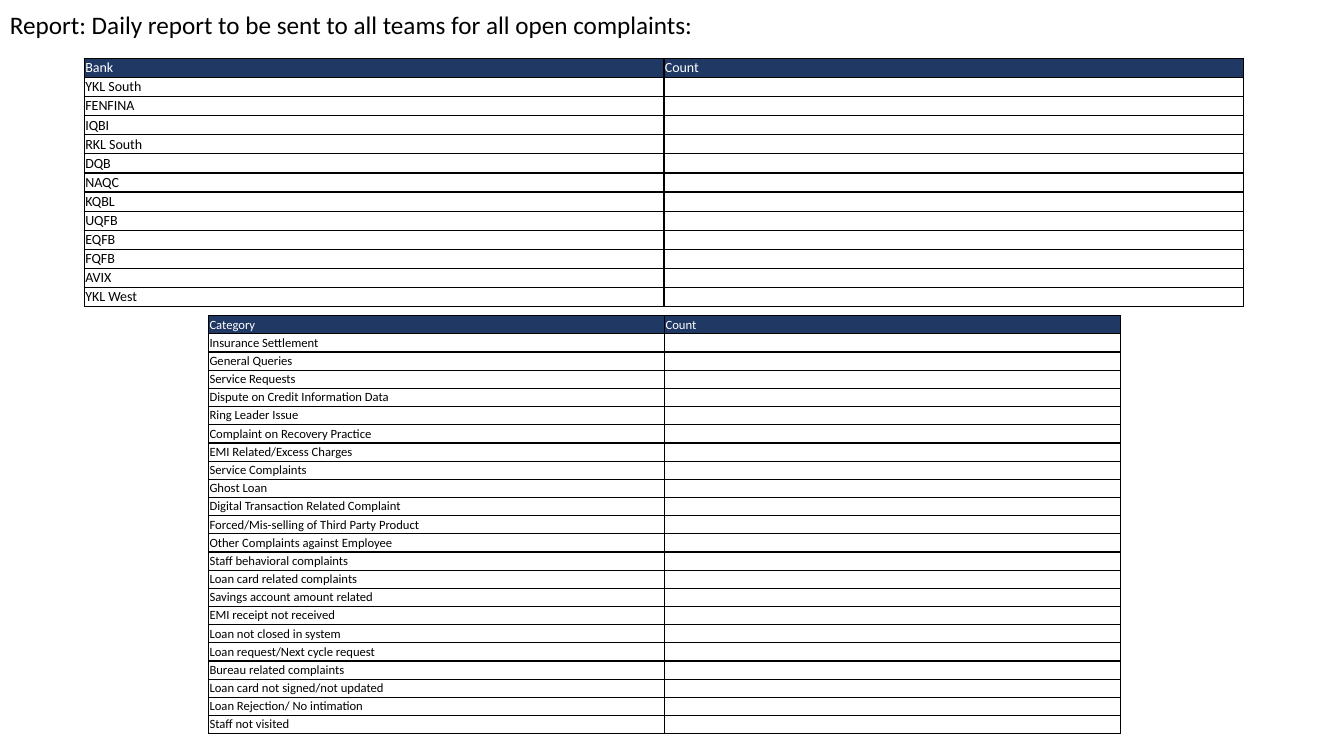
from lxml.etree import SubElement
from pptx import Presentation
from pptx.dml.color import RGBColor
from pptx.enum.text import MSO_ANCHOR
from pptx.oxml.ns import qn
from pptx.util import Pt

FONT = "Calibri"
NAVY, WHITE, BLACK = "203864", "FFFFFF", "000000"


def rgb(hex_color):
    return RGBColor.from_string(hex_color)


def add_borders(cell):
    """Draw a 1 pt black line on all four sides of the cell."""
    tc_pr = cell._tc.get_or_add_tcPr()
    for side in ("lnL", "lnR", "lnT", "lnB"):
        ln = SubElement(tc_pr, qn(f"a:{side}"), w=str(Pt(1)))
        fill = SubElement(ln, qn("a:solidFill"))
        SubElement(fill, qn("a:srgbClr"), val=BLACK)


banks = [
    "YKL South", "FENFINA", "IQBI", "RKL South", "DQB", "NAQC",
    "KQBL", "UQFB", "EQFB", "FQFB", "AVIX", "YKL West",
]
categories = [
    "Insurance Settlement", "General Queries", "Service Requests",
    "Dispute on Credit Information Data", "Ring Leader Issue",
    "Complaint on Recovery Practice", "EMI Related/Excess Charges",
    "Service Complaints", "Ghost Loan",
    "Digital Transaction Related Complaint",
    "Forced/Mis-selling of Third Party Product",
    "Other Complaints against Employee", "Staff behavioral complaints",
    "Loan card related complaints", "Savings account amount related",
    "EMI receipt not received", "Loan not closed in system",
    "Loan request/Next cycle request", "Bureau related complaints",
    "Loan card not signed/not updated", "Loan Rejection/ No intimation",
    "Staff not visited",
]

prs = Presentation()
prs.slide_width, prs.slide_height = Pt(960), Pt(540)
s = prs.slides.add_slide(prs.slide_layouts[6])

# Title
tf = s.shapes.add_textbox(Pt(0), Pt(5), Pt(840), Pt(27)).text_frame
tf.word_wrap = True
tf.vertical_anchor = MSO_ANCHOR.MIDDLE
p = tf.paragraphs[0]
p.text = "Report: Daily report to be sent to all teams for all open complaints:"
p.line_spacing = 0.9
p.font.name, p.font.size, p.font.color.rgb = FONT, Pt(18), rgb(BLACK)

# Report tables: heading, labels, left, top, width, row height, font size
tables = [
    ("Category", categories, 149, 225.5, 651.5, 13, 9),
    ("Bank", banks, 60.25, 41.75, 828, 13.65, 10),
]
for heading, labels, left, top, width, row_height, size in tables:
    rows = [(heading, "Count")] + [(label, "") for label in labels]
    table = s.shapes.add_table(
        len(rows), 2, Pt(left), Pt(top), Pt(width), Pt(row_height * len(rows))
    ).table
    table.horz_banding = False
    for i, row in enumerate(rows):
        table.rows[i].height = Pt(row_height)
        for j, text in enumerate(row):
            cell = table.cell(i, j)
            cell.margin_left = cell.margin_right = Pt(0.7)
            cell.margin_top = cell.margin_bottom = Pt(0.7)
            cell.vertical_anchor = MSO_ANCHOR.MIDDLE
            add_borders(cell)
            if i == 0:
                cell.fill.solid()
                cell.fill.fore_color.rgb = rgb(NAVY)
            else:
                cell.fill.background()
            p = cell.text_frame.paragraphs[0]
            p.text = text
            p.font.name, p.font.size, p.font.bold = FONT, Pt(size), False
            p.font.color.rgb = rgb(WHITE if i == 0 else BLACK)
            # Keeps empty cells from stretching their row
            SubElement(p._p, qn("a:endParaRPr"), sz=str(size * 100))

prs.save("out.pptx")
